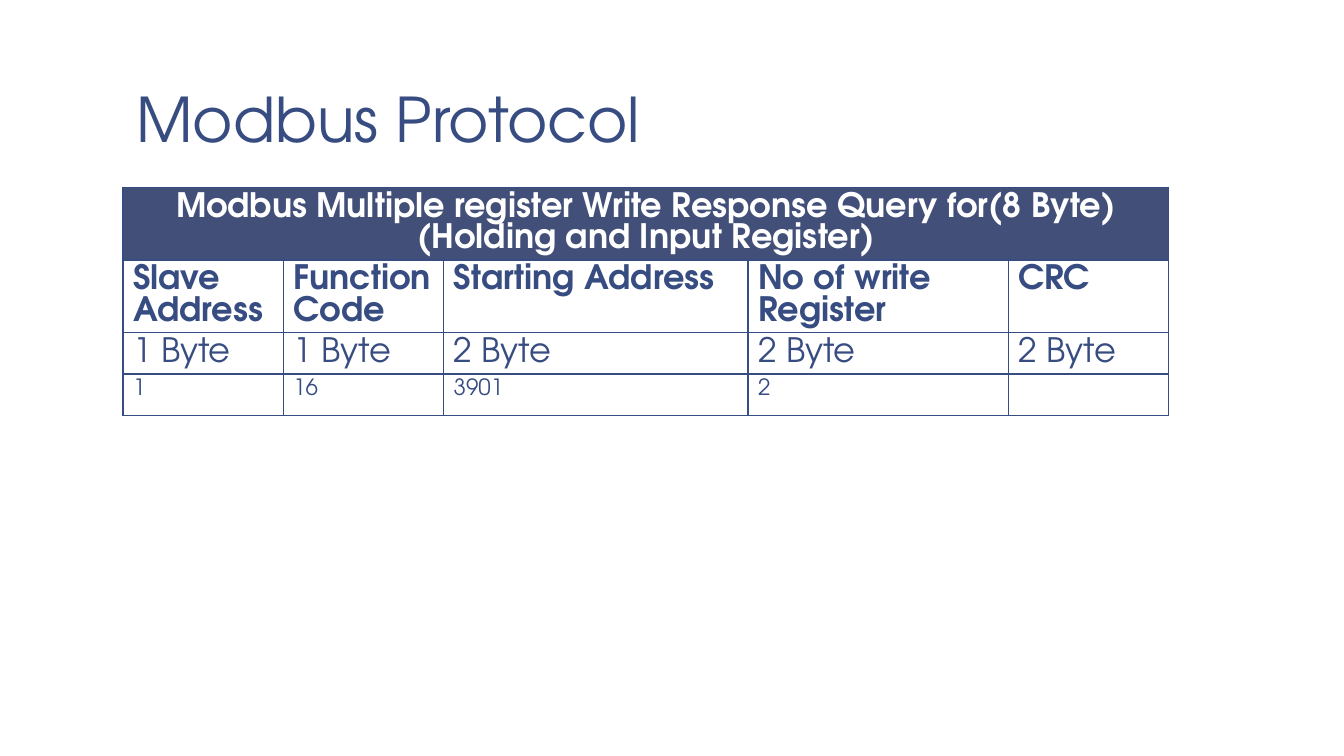
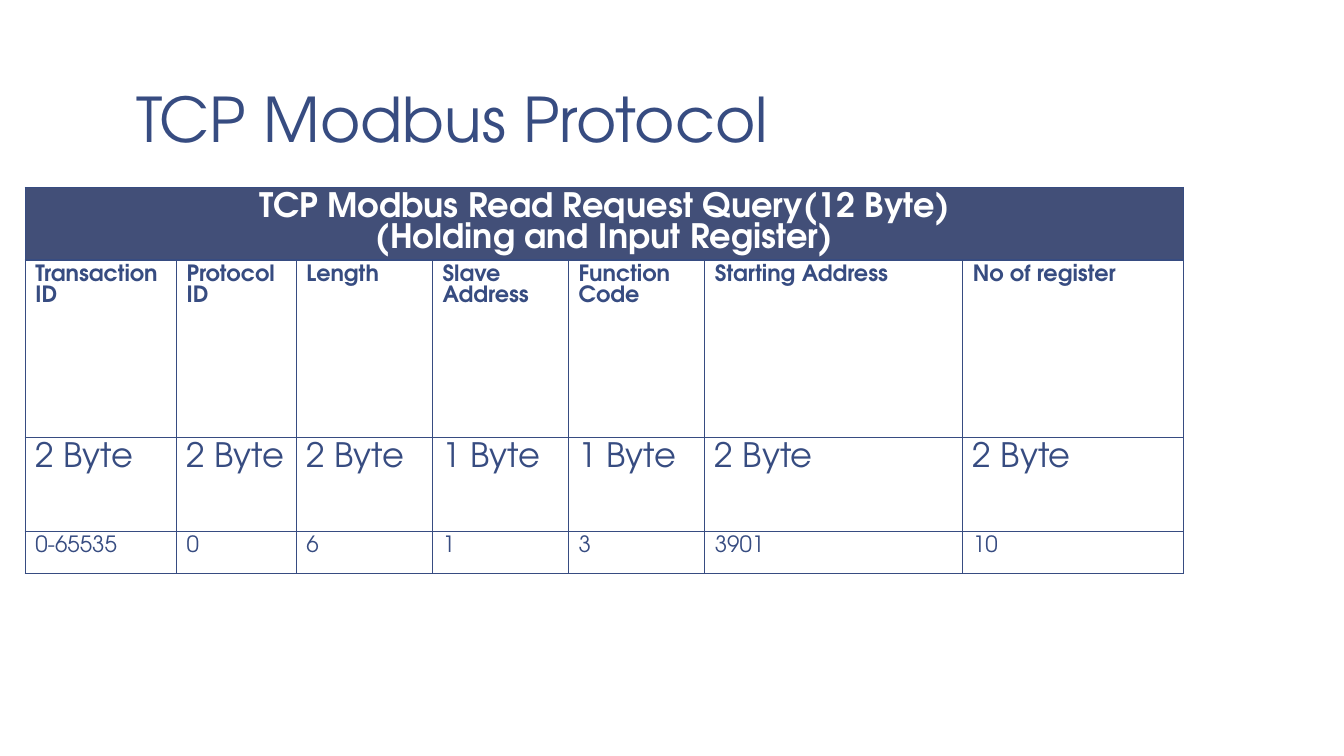
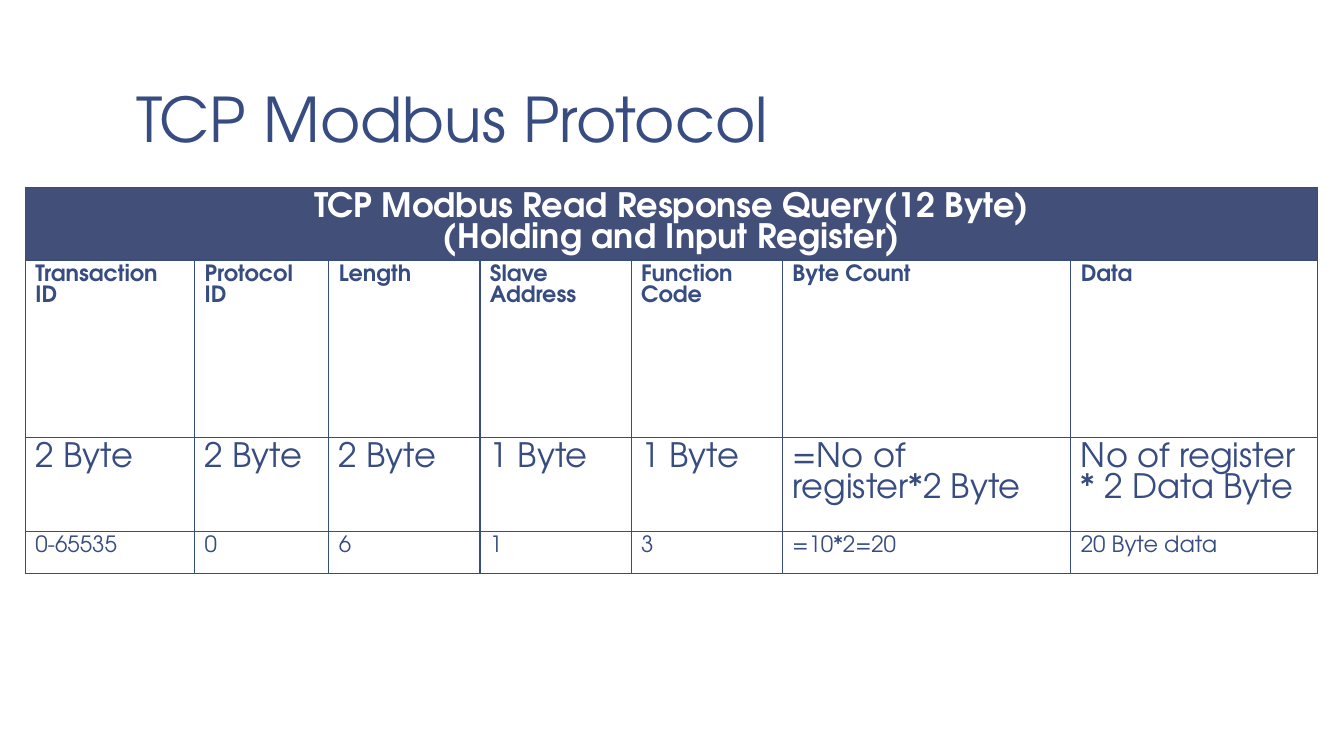
from lxml import etree
from pptx import Presentation
from pptx import util as u
from pptx.dml.color import RGBColor
from pptx.enum import text
from pptx.oxml.ns import qn

FONT = "TeX Gyre Adventor"
BLUE, HEADER, WHITE = "374C81", "424F78", "FFFFFF"


def color(hex_code):
    return RGBColor.from_string(hex_code)


def write(frame, content, size=24, ink=BLUE, bold=False,
          align=text.PP_ALIGN.LEFT, spacing=None):
    """Fill a text frame, with one paragraph for each line of content."""
    for index, line in enumerate(content.split("\n")):
        para = frame.paragraphs[0] if index == 0 else frame.add_paragraph()
        para.alignment = align
        if spacing:
            para.line_spacing = spacing
        span = para.add_run()
        span.text = line
        span.font.name = FONT
        span.font.size = u.Pt(size)
        span.font.bold = bold
        span.font.color.rgb = color(ink)


def add_borders(cell, ink=BLUE, width=1):
    properties = cell._tc.get_or_add_tcPr()
    for side in ("a:lnL", "a:lnR", "a:lnT", "a:lnB"):
        line = etree.SubElement(properties, qn(side), w=str(u.Pt(width)))
        fill = etree.SubElement(line, qn("a:solidFill"))
        etree.SubElement(fill, qn("a:srgbClr"), val=ink)


class ProtocolDeck:
    """Holds the presentation, its style and the current slide."""

    def __init__(self):
        self.deck = Presentation()
        self.deck.slide_width = u.Inches(13.33)
        self.deck.slide_height = u.Inches(7.5)
        self.page = None

    def add_page(self, title):
        self.page = self.deck.slides.add_slide(self.deck.slide_layouts[5])
        self.page.background.fill.solid()
        self.page.background.fill.fore_color.rgb = color(WHITE)
        box = self.page.shapes.title
        box.left, box.top = u.Inches(1.22), u.Inches(0.08)
        box.width, box.height = u.Inches(11.11), u.Inches(1.53)
        frame = box.text_frame
        frame.word_wrap = True
        frame.auto_size = text.MSO_AUTO_SIZE.NONE
        frame.vertical_anchor = text.MSO_ANCHOR.BOTTOM
        frame.margin_left = frame.margin_right = u.Inches(0.13)
        frame.margin_top = frame.margin_bottom = u.Inches(0.07)
        write(frame, title, size=44, spacing=0.85)

    def add_query_table(self, left, widths, heights, heading, rows, label_size):
        """Add a table with a merged heading, then labels, sizes and values."""
        table = self.page.shapes.add_table(
            len(heights), len(widths), u.Inches(left), u.Inches(1.86),
            u.Inches(sum(widths)), u.Inches(sum(heights))).table
        table.first_row = table.horz_banding = False
        for column, width in zip(table.columns, widths):
            column.width = u.Inches(width)
        for row, height in zip(table.rows, heights):
            row.height = u.Inches(height)
        table.cell(0, 0).merge(table.cell(0, len(widths) - 1))
        for cell in table.iter_cells():
            add_borders(cell)
            cell.fill.background()
        for cell in table.rows[0].cells:
            cell.fill.solid()
            cell.fill.fore_color.rgb = color(HEADER)
        write(table.cell(0, 0).text_frame, heading, ink=WHITE, bold=True,
              align=text.PP_ALIGN.CENTER)
        formats = ({"size": label_size, "bold": True}, {"size": 24}, {"size": 16})
        for row_index, (row, style) in enumerate(zip(rows, formats), start=1):
            for column_index, content in enumerate(row):
                write(table.cell(row_index, column_index).text_frame, content, **style)


def main():
    slides = ProtocolDeck()
    tcp_heights = [0.72, 1.76, 0.93, 0.42]
    tcp_labels = ["Transaction ID", "Protocol ID", "Length", "Slave Address",
                  "Function\nCode"]
    tcp_sizes = ["2 Byte"] * 3 + ["1 Byte"] * 2
    tcp_values = ["0-65535", "0", "6", "1", "3"]

    slides.add_page("Modbus Protocol")
    slides.add_query_table(
        1.22, [1.59, 1.59, 3.02, 2.58, 1.59], [0.72, 0.72, 0.41, 0.41],
        "Modbus Multiple register Write Response Query for(8 Byte)\n"
        "(Holding and Input Register)",
        [["Slave Address", "Function\nCode", "Starting Address",
          "No of write Register", "CRC"],
         ["1 Byte"] * 2 + ["2 Byte"] * 3,
         ["1", "16", "3901", "2"]],
        label_size=24)

    slides.add_page("TCP Modbus Protocol")
    slides.add_query_table(
        0.25, [1.5, 1.19, 1.35, 1.35, 1.35, 2.56, 2.19], tcp_heights,
        "TCP Modbus Read Request Query(12 Byte)\n(Holding and Input Register)",
        [tcp_labels + ["Starting Address", "No of register"],
         tcp_sizes + ["2 Byte"] * 2,
         tcp_values + ["3901", "10"]],
        label_size=16)

    slides.add_page("TCP Modbus Protocol")
    slides.add_query_table(
        0.25, [1.68, 1.33, 1.5, 1.5, 1.5, 2.86, 2.45], tcp_heights,
        "TCP Modbus Read Response Query(12 Byte)\n(Holding and Input Register)",
        [tcp_labels + ["Byte Count", "Data"],
         tcp_sizes + ["=No of register*2 Byte", "No of register * 2 Data Byte"],
         tcp_values + ["=10*2=20", "20 Byte data"]],
        label_size=16)

    slides.deck.save("out.pptx")


if __name__ == "__main__":
    main()
